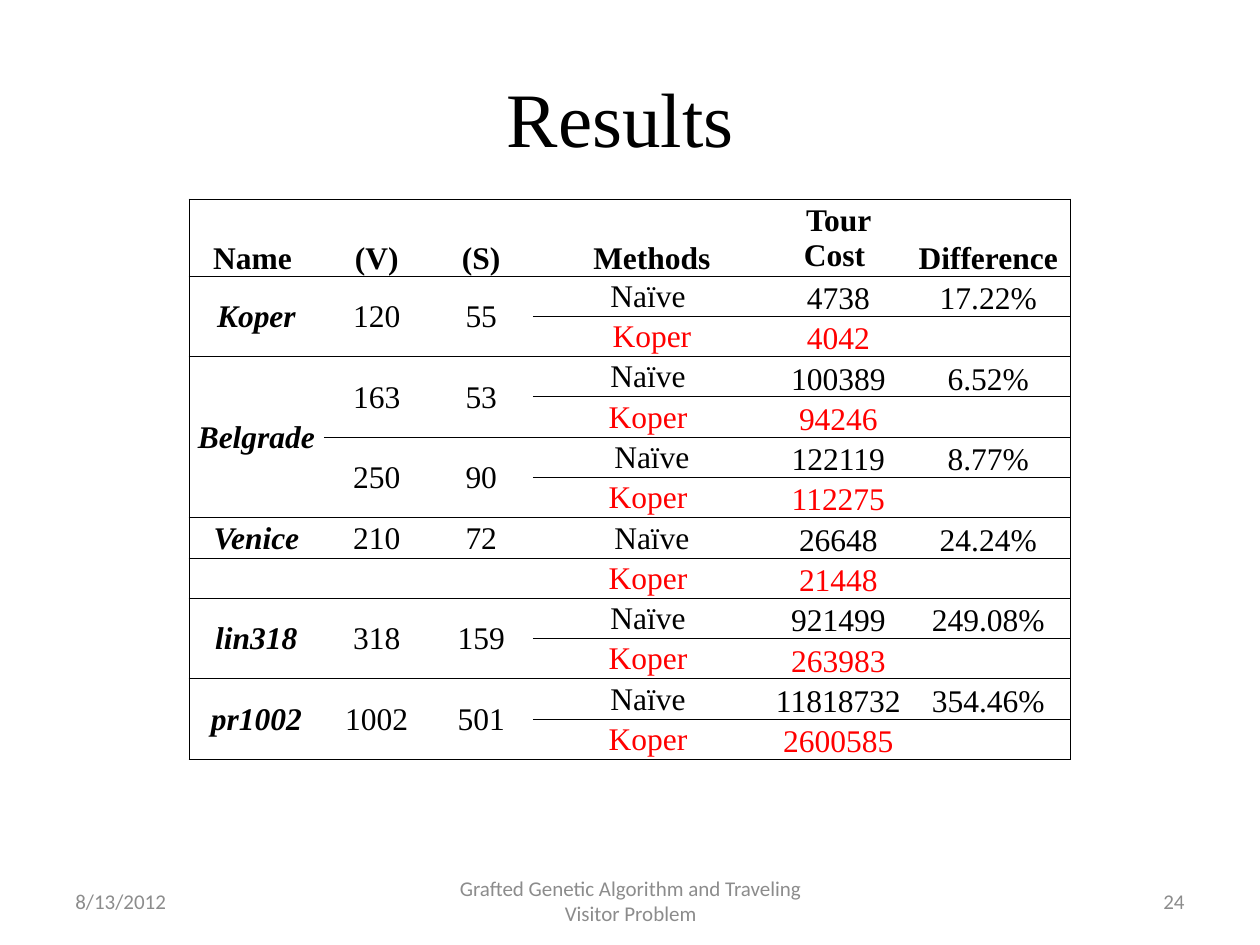
import pptx
import pptx.util
import pptx.dml.color
import pptx.enum.text
import pptx.oxml.ns
import lxml.etree

Inches, Pt = pptx.util.Inches, pptx.util.Pt
ALIGN = {"l": pptx.enum.text.PP_ALIGN.LEFT, "c": pptx.enum.text.PP_ALIGN.CENTER,
         "r": pptx.enum.text.PP_ALIGN.RIGHT}
ANCHOR = {"m": pptx.enum.text.MSO_ANCHOR.MIDDLE, "b": pptx.enum.text.MSO_ANCHOR.BOTTOM}
COLORS = {"ink": "000000", "red": "FF0000", "gray": "8C8C8C"}
SERIF, SANS = "Times New Roman", "Calibri"
NO_GRID = "{2D5ABB26-0587-4C30-8999-92F81FD0307C}"

# Content: header with anchors, then two table rows per case
HEADS = [("Name ", "b"), ("(V)", "b"), ("(S)", "b"), ("Methods", "b"),
         ("Tour Cost ", "m"), ("Difference", "b")]
# name, rows the name spans, V, S, rows V and S span, methods, costs, difference
CASES = [
    ("Koper", 2, "120", "55", 2, ("Naïve ", "Koper"), ("4738", "4042"), "17.22%"),
    ("Belgrade", 4, "163", "53", 2, ("Naïve ", "Koper "), ("100389", "94246"), "6.52%"),
    (None, 0, "250", "90", 2, ("Naïve", "Koper "), ("122119", "112275"), "8.77%"),
    ("Venice", 1, "210", "72", 1, ("Naïve", "Koper "), ("26648", "21448"), "24.24%"),
    ("lin318", 2, "318", "159", 2, ("Naïve ", "Koper "), ("921499", "263983"), "249.08%"),
    ("pr1002", 2, "1002", "501", 2, ("Naïve ", "Koper "), ("11818732", "2600585"), "354.46%"),
]
WIDTHS = [1.07, 0.84, 0.82, 1.89, 1.07, 1.31]
HEAD_H, ROW_H = 0.58, 0.32
FOOTS = [("8/13/2012", 0.5, 2.33, "l"),
         ("Grafted Genetic Algorithm and Traveling Visitor Problem", 3.42, 3.17, "c"),
         ("24", 7.17, 2.33, "r")]


def write(frame, text, size=18, font=SERIF, color="ink", align="c", bold=False, italic=False):
    para = frame.paragraphs[0]
    para.alignment = ALIGN[align]
    if not text:
        para.font.size = Pt(size)
        return
    run = para.add_run()
    run.text = text
    face = run.font
    face.size, face.name, face.bold, face.italic = Pt(size), font, bold, italic
    face.color.rgb = pptx.dml.color.RGBColor.from_string(COLORS[color])


def rule(cell, sides):
    """Draw thin lines on the given sides of a cell."""
    props = cell._tc.get_or_add_tcPr()
    qn = pptx.oxml.ns.qn
    for side in sides:
        line = lxml.etree.SubElement(props, qn("a:ln" + side), w=str(Pt(0.5)))
        fill = lxml.etree.SubElement(line, qn("a:solidFill"))
        lxml.etree.SubElement(fill, qn("a:srgbClr"), val=COLORS["ink"])


def put(table, row, col, text="", span=1, anchor="m", **style):
    cell = table.cell(row, col)
    end = row + span - 1
    if span > 1:
        cell.merge(table.cell(end, col))
    cell.margin_left = cell.margin_right = cell.margin_top = Inches(0.01)
    cell.margin_bottom = 0
    cell.vertical_anchor = ANCHOR[anchor]
    # Outer edges, plus a line above and below each pair of rows
    edges = {"L": col == 0, "R": col == len(WIDTHS) - 1,
             "T": row == 0 or row % 2 == 1, "B": end % 2 == 0}
    rule(cell, [side for side, shown in edges.items() if shown])
    cell.fill.background()
    write(cell.text_frame, text, **style)


def main():
    deck = pptx.Presentation()
    deck.slide_width, deck.slide_height = Inches(10), Inches(7.5)
    slide = deck.slides.add_slide(deck.slide_layouts[5])

    # Title
    title = slide.shapes.title
    title.left, title.top, title.width, title.height = map(Inches, (0.5, 0.3, 9, 1.25))
    title.text_frame.vertical_anchor = ANCHOR["m"]
    write(title.text_frame, "Results ", size=44)

    # Footer
    for text, left, width, align in FOOTS:
        box = slide.shapes.add_textbox(Inches(left), Inches(6.95), Inches(width), Inches(0.4))
        box.text_frame.word_wrap = True
        box.text_frame.vertical_anchor = ANCHOR["m"]
        write(box.text_frame, text, size=12, font=SANS, color="gray", align=align)

    # Table grid
    count = 2 * len(CASES) + 1
    frame = slide.shapes.add_table(count, len(WIDTHS), Inches(1.5), Inches(1.58), Inches(sum(WIDTHS)),
                                   Inches(HEAD_H + ROW_H * (count - 1)))
    table = frame.table
    table.first_row = table.horz_banding = False
    table._tbl.tblPr.find(pptx.oxml.ns.qn("a:tableStyleId")).text = NO_GRID
    for col, width in zip(table.columns, WIDTHS):
        col.width = Inches(width)
    for num, row in enumerate(table.rows):
        row.height = Inches(ROW_H if num else HEAD_H)

    # Table text
    for col, (text, anchor) in enumerate(HEADS):
        put(table, 0, col, text, anchor=anchor, bold=True)
    for num, (name, deep, nodes, stops, span, methods, costs, diff) in enumerate(CASES):
        top = 2 * num + 1
        if name:
            put(table, top, 0, name, span=deep, bold=True, italic=True)
        put(table, top, 1, nodes, span=span)
        put(table, top, 2, stops, span=span)
        if span == 1:
            for col in range(3):
                put(table, top + 1, col)
        for step, color in enumerate(("ink", "red")):
            put(table, top + step, 3, methods[step], color=color)
            put(table, top + step, 4, costs[step], anchor="b", color=color)
        put(table, top, 5, diff, anchor="b")
        put(table, top + 1, 5)

    deck.save("out.pptx")


if __name__ == "__main__":
    main()
